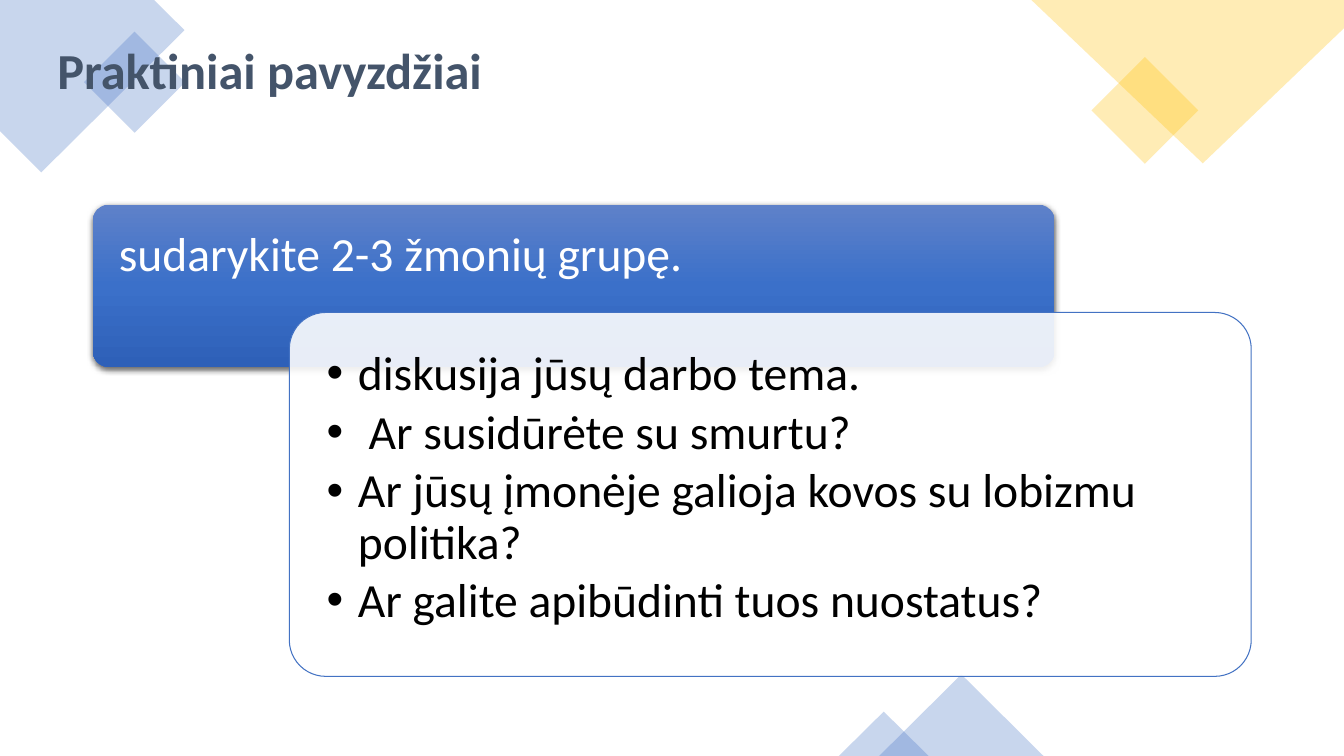
from lxml import etree
from pptx import Presentation
from pptx.dml.color import RGBColor
from pptx.enum.shapes import MSO_SHAPE
from pptx.enum.text import MSO_ANCHOR
from pptx.oxml.ns import qn
from pptx.util import Inches, Pt

RECTANGLE = MSO_SHAPE.RECTANGLE
ROUNDED = MSO_SHAPE.ROUNDED_RECTANGLE
TRIANGLE = MSO_SHAPE.ISOSCELES_TRIANGLE
TOP, MIDDLE = MSO_ANCHOR.TOP, MSO_ANCHOR.MIDDLE

COLORS = {
    "blue": "4472C4",
    "yellow": "FFC000",
    "title": "44546A",
    "white": "FFFFFF",
    "black": "000000",
    "outline": "4372C3",
    "header_top": "5E81C9",
    "header_middle": "3B70C9",
    "header_bottom": "2E60B8",
}
QUESTIONS = [
    "diskusija jūsų darbo tema.",
    " Ar susidūrėte su smurtu?",
    "Ar jūsų įmonėje galioja kovos su lobizmu politika?",
    "Ar galite apibūdinti tuos nuostatus?",
]


def add_element(parent, tag, **attributes):
    element = etree.SubElement(parent, qn(tag))
    for name, value in attributes.items():
        element.set(name, str(value))
    return element


class SlideBuilder:
    font = "Calibri"
    decor_opacity = 29

    def __init__(self, slide):
        self.slide = slide

    def color(self, name):
        return RGBColor.from_string(COLORS[name])

    def paint(self, shape, fill, opacity, line=None):
        shape.shadow.inherit = False
        shape.fill.solid()
        shape.fill.fore_color.rgb = self.color(fill)
        color = shape.fill._xPr.find(qn("a:solidFill"))[0]
        add_element(color, "a:alpha", val=opacity * 1000)
        if line:
            shape.line.color.rgb = self.color(line)
            shape.line.width = Pt(0.75)
        else:
            shape.line.fill.background()

    def shape(self, kind, area, fill, opacity=decor_opacity, line=None, rotation=0):
        shape = self.slide.shapes.add_shape(kind, *map(Inches, area))
        shape.rotation = rotation
        if kind == ROUNDED:
            shape.adjustments[0] = 0.1
        self.paint(shape, fill, opacity, line)
        return shape

    def outline(self, points, fill):
        corners = [(Inches(x), Inches(y)) for x, y in points]
        builder = self.slide.shapes.build_freeform(*corners[0])
        builder.add_line_segments(corners[1:], close=True)
        self.paint(builder.convert_to_shape(), fill, self.decor_opacity)

    def gradient_card(self, area, stops):
        card = self.shape(ROUNDED, area, "white", 100)
        card.fill.gradient()
        card.fill.gradient_angle = 270
        stop_list = card.fill._xPr.find(qn("a:gradFill")).find(qn("a:gsLst"))
        for stop in list(stop_list):
            stop_list.remove(stop)
        for position, name in stops:
            stop = add_element(stop_list, "a:gs", pos=position * 1000)
            add_element(stop, "a:srgbClr", val=COLORS[name])
        effects = card._element.spPr.find(qn("a:effectLst"))
        shadow = add_element(effects, "a:outerShdw", blurRad=Pt(4.5), dist=Pt(1.5),
                             dir=90 * 60000, algn="ctr", rotWithShape=0)
        color = add_element(shadow, "a:srgbClr", val=COLORS["black"])
        add_element(color, "a:alpha", val=62000)

    def text(self, area, lines, size, color, margins, anchor=TOP, bold=False, bullets=False):
        box = self.slide.shapes.add_textbox(*map(Inches, area))
        frame = box.text_frame
        frame.word_wrap = True
        frame.vertical_anchor = anchor
        (frame.margin_left, frame.margin_top,
         frame.margin_right, frame.margin_bottom) = map(Inches, margins)
        for index, line in enumerate(lines):
            para = frame.paragraphs[0] if index == 0 else frame.add_paragraph()
            para.text = line
            para.line_spacing = 0.9
            if index:
                para.space_before = Pt(5.1)
            if bullets:
                self.bullet(para, color)
            para.font.name = self.font
            para.font.size = Pt(size)
            para.font.bold = bold
            para.font.color.rgb = self.color(color)

    def bullet(self, para, color):
        para.level = 1
        properties = para._p.get_or_add_pPr()
        properties.set("marL", str(Inches(0.31)))
        properties.set("indent", str(-Inches(0.31)))
        bullet_color = add_element(properties, "a:buClr")
        add_element(bullet_color, "a:srgbClr", val=COLORS[color])
        add_element(properties, "a:buFont", typeface="Arial")
        add_element(properties, "a:buChar", char="•")


def main():
    deck = Presentation()
    deck.slide_width, deck.slide_height = Inches(13.33), Inches(7.5)
    page = SlideBuilder(deck.slides.add_slide(deck.slide_layouts[6]))

    # Corner decorations
    page.outline([(1.53, 0), (0, 0), (0, 1.3), (0.41, 1.71), (1.83, 0.3)], "blue")
    page.shape(RECTANGLE, (0.98, 0.46, 0.71, 0.71), "blue", rotation=315)
    page.shape(RECTANGLE, (10.98, 0.72, 0.75, 0.75), "yellow", rotation=315)
    page.outline([(13.33, 0), (10.23, 0), (11.93, 1.62), (13.33, 0.28)], "yellow")
    page.shape(TRIANGLE, (8.72, 6.69, 1.63, 0.81), "blue")
    page.shape(TRIANGLE, (8.32, 7.06, 0.89, 0.44), "blue")

    # Title
    page.text((0.47, 0.22, 11.5, 1.02), ["Praktiniai pavyzdžiai"], 36, "title",
              (0.1, 0.05, 0.1, 0.05), MIDDLE, bold=True)

    # Task header
    page.gradient_card((0.92, 2.03, 9.54, 1.61),
                       [(0, "header_top"), (50, "header_middle"), (100, "header_bottom")])
    page.text((0.92, 2.03, 9.54, 1.07), ["sudarykite 2-3 žmonių grupę."], 34, "white",
              (0.26, 0.26, 0.26, 0.14))

    # Discussion questions
    page.shape(ROUNDED, (2.87, 3.1, 9.54, 3.61), "white", 89, "outline")
    page.text((2.98, 3.21, 9.33, 3.4), QUESTIONS, 34, "black", (0.26,) * 4, bullets=True)

    deck.save("out.pptx")


if __name__ == "__main__":
    main()
